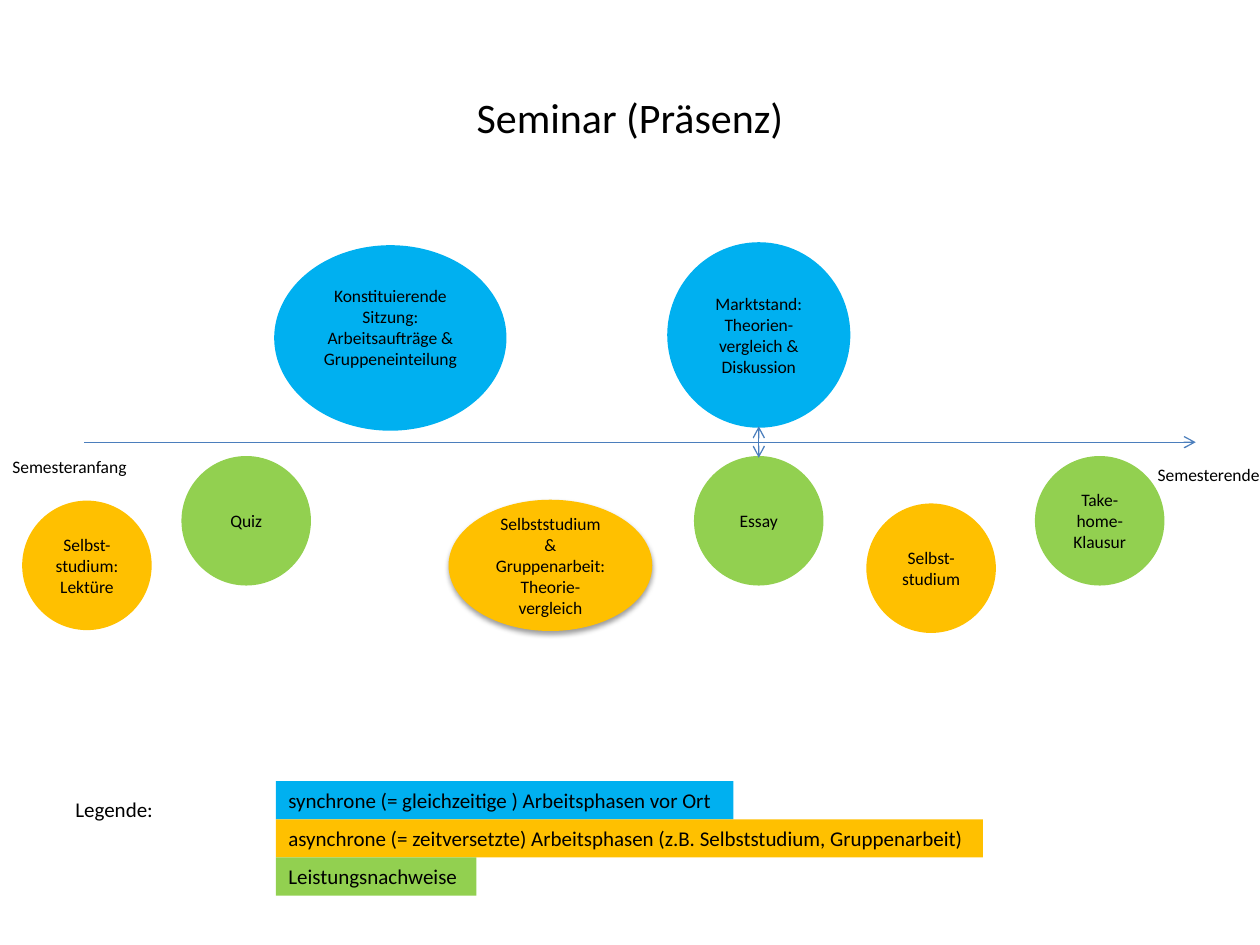
"""Build a slide that shows the course of a seminar along a semester timeline."""
from dataclasses import dataclass

from lxml.etree import SubElement
from pptx import Presentation
from pptx.dml.color import RGBColor
from pptx.enum.shapes import MSO_CONNECTOR as Connector, MSO_SHAPE as Shape
from pptx.enum.text import MSO_ANCHOR as Anchor, MSO_AUTO_SIZE as AutoSize, PP_ALIGN as Align
from pptx.oxml.ns import qn
from pptx.util import Pt


@dataclass(frozen=True)
class Theme:
    font: str = "Calibri"
    text: RGBColor = RGBColor(0x00, 0x00, 0x00)
    axis: RGBColor = RGBColor(0x4B, 0x7E, 0xBC)
    onsite: RGBColor = RGBColor(0x00, 0xB0, 0xF0)
    self_study: RGBColor = RGBColor(0xFF, 0xC0, 0x00)
    assessment: RGBColor = RGBColor(0x92, 0xD0, 0x50)
    title_size: int = 24
    legend_size: int = 12
    label_size: int = 10


THEME = Theme()
CIRCLE = 72
LEGEND_LEFT, LEGEND_TOP, LEGEND_ROW = 157.7, 446.4, 21.8
PHASES = [
    ("Konstituierende Sitzung: Arbeitsaufträge & Gruppeneinteilung",
     THEME.onsite, (157.7, 141.1, 130.7, 104), {"bottom": 15.8}),
    ("Marktstand: Theorien-vergleich & Diskussion",
     THEME.onsite, (382.3, 139.4, 102.6, 104), {}),
    ("Selbst-studium: Lektüre", THEME.self_study, (13.7, 287.1, CIRCLE, CIRCLE), {}),
    ("Quiz", THEME.assessment, (104.7, 261.6, CIRCLE, CIRCLE), {}),
    ("Selbststudium & Gruppenarbeit: Theorie-\nvergleich",
     THEME.self_study, (257.8, 287.1, 113.4, CIRCLE), {"border": 3, "shadow": True}),
    ("Take-home-Klausur", THEME.assessment, (592.4, 261.6, CIRCLE, CIRCLE), {}),
    ("Selbst-studium", THEME.self_study, (496.1, 288.7, CIRCLE, CIRCLE), {}),
    ("Essay", THEME.assessment, (397.6, 261.6, CIRCLE, CIRCLE), {}),
]
LEGEND = [
    ("synchrone (= gleichzeitige ) Arbeitsphasen vor Ort", THEME.onsite, 261.4),
    ("asynchrone (= zeitversetzte) Arbeitsphasen (z.B. Selbststudium, Gruppenarbeit)",
     THEME.self_study, 403.9),
    ("Leistungsnachweise", THEME.assessment, 114.5),
]


def write_text(frame, text, size=THEME.label_size, align=Align.LEFT, anchor=Anchor.TOP,
               wrap=True, grow=False, bottom=3.6):
    """Fill a text frame with uniformly formatted paragraphs."""
    frame.text = text
    frame.word_wrap = wrap
    frame.auto_size = AutoSize.SHAPE_TO_FIT_TEXT if grow else AutoSize.NONE
    frame.vertical_anchor = anchor
    frame.margin_bottom = Pt(bottom)
    for paragraph in frame.paragraphs:
        paragraph.alignment = align
        paragraph.font.name = THEME.font
        paragraph.font.size = Pt(size)
        paragraph.font.color.rgb = THEME.text


def add_title(slide, text):
    """Place and format the title placeholder."""
    title = slide.shapes.title
    title.left, title.top, title.width, title.height = Pt(36), Pt(21.6), Pt(648), Pt(90)
    write_text(title.text_frame, text, size=THEME.title_size, align=Align.CENTER,
               anchor=Anchor.MIDDLE)


def add_label(slide, text, box, fill=None, **text_format):
    """Add a text box that fits its text, with an optional fill."""
    label = slide.shapes.add_textbox(*map(Pt, box))
    if fill is not None:
        label.fill.solid()
        label.fill.fore_color.rgb = fill
    write_text(label.text_frame, text, grow=True, **text_format)


def add_phase(slide, text, color, box, border=2, shadow=False, **text_format):
    """Add an ellipse for one phase of the seminar."""
    phase = slide.shapes.add_shape(Shape.OVAL, *map(Pt, box))
    phase.fill.solid()
    phase.fill.fore_color.rgb = color
    phase.line.color.rgb = color
    phase.line.width = Pt(border)
    phase.shadow.inherit = False
    if shadow:
        add_shadow(phase)
    write_text(phase.text_frame, text, align=Align.CENTER, anchor=Anchor.MIDDLE, **text_format)


def add_shadow(shape):
    """Give a shape a soft shadow that falls straight down."""
    effects = shape.element.spPr.find(qn("a:effectLst"))
    outer = SubElement(effects, qn("a:outerShdw"), blurRad=str(Pt(3.1)), dist=str(Pt(1.6)),
                       dir="5400000", rotWithShape="0")
    color = SubElement(outer, qn("a:srgbClr"), val="000000")
    SubElement(color, qn("a:alpha"), val="38000")


def add_arrow(slide, start, end, ends=("tailEnd",)):
    """Add a thin straight line with open arrowheads at the named ends."""
    arrow = slide.shapes.add_connector(Connector.STRAIGHT, *map(Pt, start + end))
    arrow.line.color.rgb = THEME.axis
    arrow.line.width = Pt(0.75)
    properties = arrow.element.spPr
    for name in ends:
        SubElement(properties.find(qn("a:ln")), qn(f"a:{name}"), type="arrow")
    SubElement(properties, qn("a:effectLst"))


def add_legend(slide):
    """Add the legend heading and its stacked colour bars."""
    add_label(slide, "Legende:", (36, 451.4, 59, LEGEND_ROW), size=THEME.legend_size, wrap=False)
    for row, (text, color, width) in enumerate(LEGEND):
        box = (LEGEND_LEFT, LEGEND_TOP + row * LEGEND_ROW, width, LEGEND_ROW)
        add_label(slide, text, box, fill=color, size=THEME.legend_size, wrap=False)


def main():
    """Assemble the slide and save it."""
    presentation = Presentation()
    presentation.slide_width, presentation.slide_height = Pt(720), Pt(540)
    slide = presentation.slides.add_slide(presentation.slide_layouts[5])
    add_title(slide, "Seminar (Präsenz)")
    add_label(slide, "Semesteranfang", (0, 257, 85.7, 19.4))
    add_arrow(slide, (48.2, 252.7), (683.3, 252.7))
    add_label(slide, "Semesterende", (654.5, 261.6, 74.2, 19.4), wrap=False)
    for text, color, box, options in PHASES:
        add_phase(slide, text, color, box, **options)
    add_legend(slide)
    add_arrow(slide, (433.6, 243.6), (433.6, 261.6), ends=("headEnd", "tailEnd"))
    presentation.save("out.pptx")


if __name__ == "__main__":
    main()
